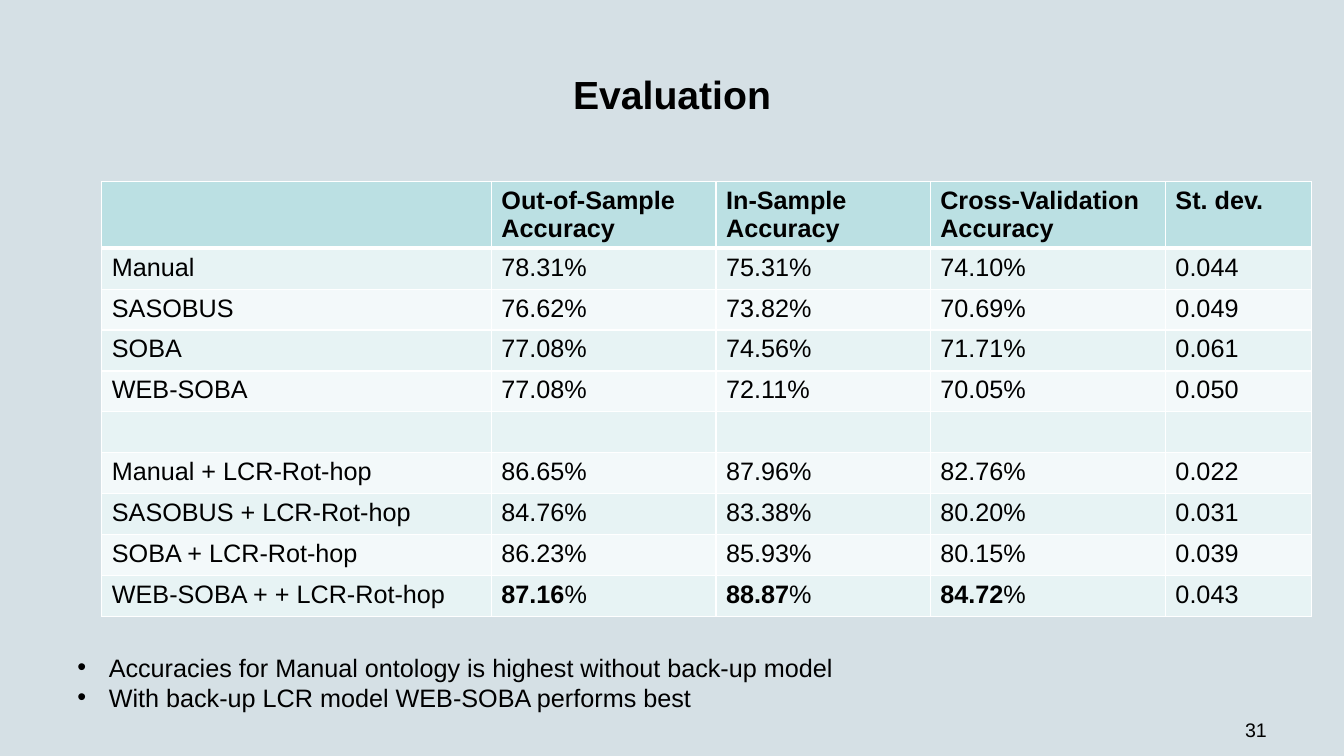
from dataclasses import dataclass

from lxml import etree
from pptx import Presentation
from pptx import util as u
from pptx.dml.color import RGBColor
from pptx.enum import text
from pptx.oxml import ns


@dataclass(frozen=True)
class Theme:
    """Colours, font and type sizes of the slide."""
    back: str = "D5E0E5"
    ink: str = "000000"
    line: str = "FFFFFF"
    head: str = "BBE0E3"
    bands: tuple = ("F3F9FA", "E7F3F4")
    font: str = "Arial"
    title: int = 28
    body: int = 18
    page: int = 14


THEME = Theme()
WIDE, HIGH = 1280, 720
COLS = (371, 214, 204, 224, 139)
HEAD, ROW = 63, 39
SCORES = (
    ("", "Out-of-Sample Accuracy", "In-Sample Accuracy",
     "Cross-Validation Accuracy", "St. dev."),
    ("Manual", "78.31%", "75.31%", "74.10%", "0.044"),
    ("SASOBUS", "76.62%", "73.82%", "70.69%", "0.049"),
    ("SOBA", "77.08%", "74.56%", "71.71%", "0.061"),
    ("WEB-SOBA", "77.08%", "72.11%", "70.05%", "0.050"),
    ("",) * 5,
    ("Manual + LCR-Rot-hop", "86.65%", "87.96%", "82.76%", "0.022"),
    ("SASOBUS + LCR-Rot-hop", "84.76%", "83.38%", "80.20%", "0.031"),
    ("SOBA + LCR-Rot-hop", "86.23%", "85.93%", "80.15%", "0.039"),
    ("WEB-SOBA + + LCR-Rot-hop", "*87.16*%", "*88.87*%", "*84.72*%", "0.043"),
)
NOTES = (
    "Accuracies for Manual ontology is highest without back-up model",
    "With back-up LCR model WEB-SOBA performs best",
)


def px(n):
    """Turn pixels into EMU."""
    return u.Emu(n * 9525)


def apply(obj, **vals):
    """Set each given format value on an object."""
    for key, val in vals.items():
        setattr(obj, key, val)


def place(shape, box):
    """Move a shape to its box."""
    apply(shape, **dict(zip(("left", "top", "width", "height"), map(px, box))))


def write(para, words, size, bold=False):
    """Add runs to a paragraph; words between stars are bold."""
    for i, part in enumerate(words.split("*")):
        if part:
            run = para.add_run()
            run.text = part
            apply(run.font, name=THEME.font, size=u.Pt(size),
                  bold=bold or i % 2 == 1)
            run.font.color.rgb = RGBColor.from_string(THEME.ink)


def edge(cell, side, width):
    """Draw one border of a cell."""
    prop = cell._tc.get_or_add_tcPr()
    line = etree.SubElement(prop, ns.qn(f"a:ln{side}"), w=str(u.Pt(width)))
    fill = etree.SubElement(line, ns.qn("a:solidFill"))
    etree.SubElement(fill, ns.qn("a:srgbClr"), val=THEME.line)


def add_title(slide, box):
    """Fill the title placeholder."""
    shape = slide.shapes.title
    place(shape, box)
    frame = shape.text_frame
    apply(frame, vertical_anchor=text.MSO_ANCHOR.MIDDLE, word_wrap=True,
          auto_size=text.MSO_AUTO_SIZE.NONE)
    frame.paragraphs[0].alignment = text.PP_ALIGN.CENTER
    write(frame.paragraphs[0], "Evaluation", THEME.title, True)


def add_scores(slide, box):
    """Build the table of accuracies."""
    table = slide.shapes.add_table(
        len(SCORES), len(COLS), *map(px, box)).table
    table.horz_banding = False
    for col, width in zip(table.columns, COLS):
        col.width = px(width)
    for r, row in enumerate(SCORES):
        table.rows[r].height = px(ROW if r else HEAD)
        shade = THEME.bands[r % 2] if r else THEME.head
        for c, words in enumerate(row):
            cell = table.cell(r, c)
            for side in "LRTB":
                thick = (r, side) in ((0, "B"), (1, "T"))
                edge(cell, side, 3 if thick else 1)
            cell.fill.solid()
            cell.fill.fore_color.rgb = RGBColor.from_string(shade)
            write(cell.text_frame.paragraphs[0], words, THEME.body, r == 0)


def add_notes(slide, box):
    """Fill the body placeholder with the bullet list."""
    shape = slide.placeholders[1]
    place(shape, box)
    frame = shape.text_frame
    apply(frame, word_wrap=True, auto_size=text.MSO_AUTO_SIZE.NONE)
    for i, words in enumerate(NOTES):
        para = frame.add_paragraph() if i else frame.paragraphs[0]
        apply(para, space_before=u.Pt(0), line_spacing=1.0)
        prop = para._p.get_or_add_pPr()
        prop.set("marL", str(px(30)))
        prop.set("indent", str(px(-30)))
        etree.SubElement(prop, ns.qn("a:buChar"), char="•")
        write(para, words, THEME.body)


def add_page(slide, box):
    """Write the page number at the lower right."""
    frame = slide.shapes.add_textbox(*map(px, box)).text_frame
    apply(frame, word_wrap=True, margin_bottom=0,
          vertical_anchor=text.MSO_ANCHOR.BOTTOM)
    frame.paragraphs[0].alignment = text.PP_ALIGN.RIGHT
    write(frame.paragraphs[0], "31", THEME.page)


def main():
    """Build and save the slide."""
    deck = Presentation()
    apply(deck, slide_width=px(WIDE), slide_height=px(HIGH))
    slide = deck.slides.add_slide(deck.slide_layouts[1])
    fill = slide.background.fill
    fill.solid()
    fill.fore_color.rgb = RGBColor.from_string(THEME.back)
    add_title(slide, (64, 29, 1152, 120))
    add_scores(slide, (97, 173, sum(COLS), HEAD + ROW * (len(SCORES) - 1)))
    add_page(slide, (918, 656, 298, 50))
    add_notes(slide, (64, 616, 1167, 68))
    deck.save("out.pptx")


if __name__ == "__main__":
    main()
